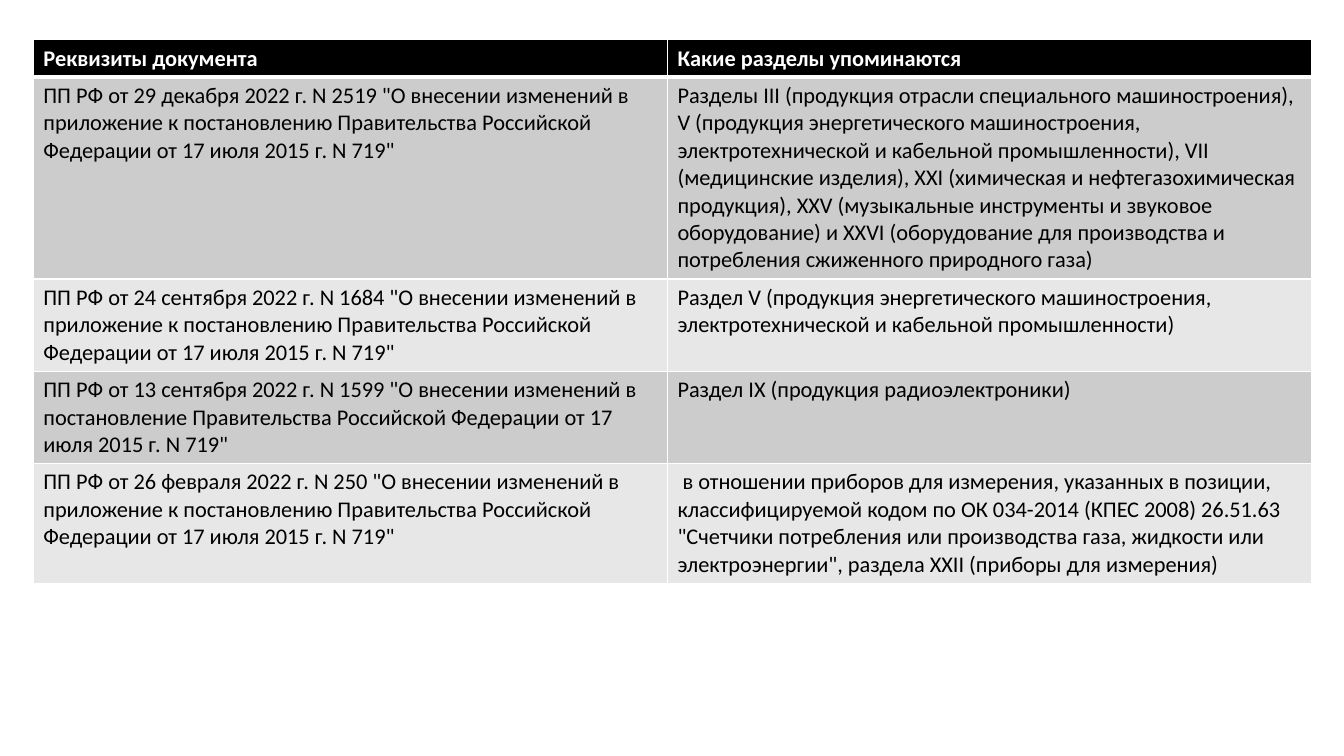
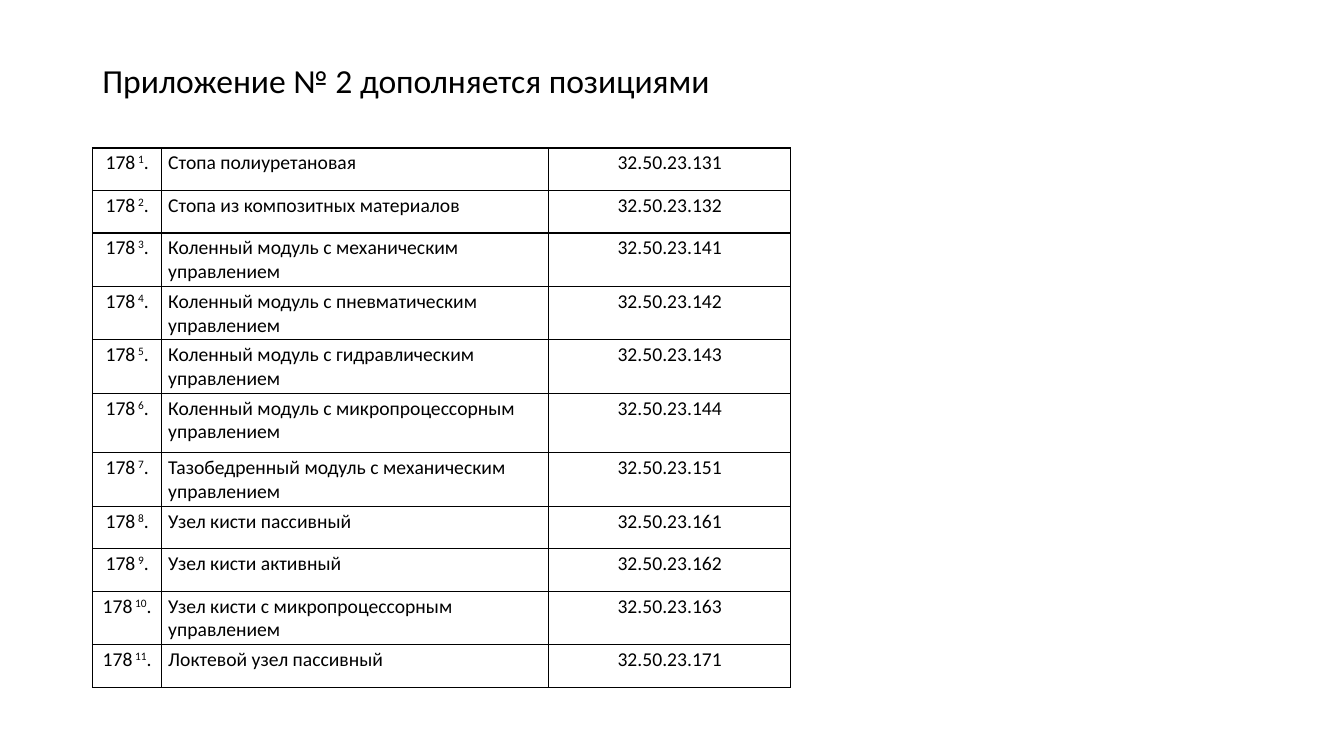
from lxml import etree
from pptx import Presentation
from pptx.dml.color import RGBColor
from pptx.enum.text import MSO_ANCHOR, PP_ALIGN
from pptx.oxml.ns import qn
from pptx.util import Cm, Pt

LEFT, CENTER = PP_ALIGN.LEFT, PP_ALIGN.CENTER
MIDDLE = MSO_ANCHOR.MIDDLE

COLORS = {
    "text": "000000",
    "paper": "FFFFFF",
    "header": "000000",
    "band_dark": "CCCCCC",
    "band_light": "E7E7E7",
}

AMENDS_ANNEX = "приложение к постановлению"
AMENDS_DECREE = "постановление"

DECREES = [
    ("29 декабря 2022 г. N 2519", AMENDS_ANNEX,
     "Разделы III (продукция отрасли специального машиностроения), "
     "V (продукция энергетического машиностроения, электротехнической и "
     "кабельной промышленности), VII (медицинские изделия), XXI (химическая и "
     "нефтегазохимическая продукция), XXV (музыкальные инструменты и звуковое "
     "оборудование) и XXVI (оборудование для производства и потребления "
     "сжиженного природного газа)"),
    ("24 сентября 2022 г. N 1684", AMENDS_ANNEX,
     "Раздел V (продукция энергетического машиностроения, электротехнической "
     "и кабельной промышленности)"),
    ("13 сентября 2022 г. N 1599", AMENDS_DECREE,
     "Раздел IX (продукция радиоэлектроники)"),
    ("26 февраля 2022 г. N 250", AMENDS_ANNEX,
     " в отношении приборов для измерения, указанных в позиции, "
     "классифицируемой кодом по ОК 034-2014 (КПЕС 2008) 26.51.63 \"Счетчики "
     "потребления или производства газа, жидкости или электроэнергии\", "
     "раздела XXII (приборы для измерения)"),
]

POSITIONS = [
    ("Стопа полиуретановая", "131"),
    ("Стопа из композитных материалов", "132"),
    ("Коленный модуль с механическим управлением", "141"),
    ("Коленный модуль с пневматическим управлением", "142"),
    ("Коленный модуль с гидравлическим управлением", "143"),
    ("Коленный модуль с микропроцессорным управлением", "144"),
    ("Тазобедренный модуль с механическим управлением", "151"),
    ("Узел кисти пассивный", "161"),
    ("Узел кисти активный", "162"),
    ("Узел кисти с микропроцессорным управлением", "163"),
    ("Локтевой узел пассивный", "171"),
]


class DeckBuilder:
    """Holds the shared style and the slide being built."""

    font = "Calibri"

    def __init__(self):
        self.deck = Presentation()
        self.deck.slide_width, self.deck.slide_height = Cm(33.87), Cm(19.05)
        self.page = None

    def new_page(self):
        self.page = self.deck.slides.add_slide(self.deck.slide_layouts[6])

    def style_spans(self, para, size, color="text", bold=False):
        for span in para.runs:
            span.font.name = self.font
            span.font.size = Pt(size)
            span.font.bold = bold
            span.font.color.rgb = RGBColor.from_string(COLORS[color])

    def title(self, text):
        box = self.page.shapes.add_textbox(Cm(2.33), Cm(1.02), Cm(29.21), Cm(2.1))
        frame = box.text_frame
        frame.word_wrap = True
        frame.vertical_anchor = MIDDLE
        frame.text = text
        para = frame.paragraphs[0]
        para.line_spacing = 0.9
        self.style_spans(para, 24)

    def table(self, left, top, widths, heights):
        frame = self.page.shapes.add_table(
            len(heights), len(widths), Cm(left), Cm(top),
            Cm(sum(widths)), Cm(sum(heights)))
        table = frame.table
        table.first_row = table.horz_banding = False
        for column, width in zip(table.columns, widths):
            column.width = Cm(width)
        for row, height in zip(table.rows, heights):
            row.height = Cm(height)
        return table

    def borders(self, cell, color, widths):
        properties = cell._tc.get_or_add_tcPr()
        for side, width in widths.items():
            line = etree.SubElement(properties, qn(f"a:ln{side}"), w=str(Pt(width)))
            fill = etree.SubElement(line, qn("a:solidFill"))
            etree.SubElement(fill, qn("a:srgbClr"), val=COLORS[color])

    def cell(self, cell, pieces, size, fill, line, color="text", bold=False,
             align=LEFT, margins=None, top=1, bottom=1):
        self.borders(cell, line, {"L": 1, "R": 1, "T": top, "B": bottom})
        cell.fill.solid()
        cell.fill.fore_color.rgb = RGBColor.from_string(COLORS[fill])
        if margins:
            cell.margin_left = cell.margin_right = Cm(margins[0])
            cell.margin_top = cell.margin_bottom = Cm(margins[1])
        para = cell.text_frame.paragraphs[0]
        para.alignment = align
        for text, raised in pieces:
            span = para.add_run()
            span.text = text
            if raised:
                span._r.get_or_add_rPr().set("baseline", "30000")
        self.style_spans(para, size, color, bold)

    def decree_table(self, headings, decrees):
        table = self.table(0.84, 1, [15.98, 16.23], [0.91] + [2.24] * len(decrees))
        for column, heading in enumerate(headings):
            self.cell(table.cell(0, column), [(heading, False)], 16, "header",
                      "paper", "paper", bold=True, bottom=3)
        for row, (number, target, sections) in enumerate(decrees, 1):
            decree = (f"ПП РФ от {number} \"О внесении изменений в {target} "
                      "Правительства Российской Федерации от 17 июля 2015 г. N 719\"")
            band = "band_dark" if row % 2 else "band_light"
            for column, text in enumerate((decree, sections)):
                self.cell(table.cell(row, column), [(text, False)], 16, band,
                          "paper", top=3 if row == 1 else 1)

    def position_table(self, positions):
        heights = [1.5 if "микропроцессорным" in name and "модуль" in name else 1.07
                   for name, _ in positions]
        table = self.table(2.33, 3.73, [1.75, 9.75, 6.1], heights)
        for row, (name, code) in enumerate(positions):
            columns = [
                ([("178", False), (f" {row + 1}", True), (".", False)], CENTER),
                ([(name, False)], LEFT),
                ([(f"32.50.23.{code}", False)], CENTER),
            ]
            for column, (pieces, align) in enumerate(columns):
                self.cell(table.cell(row, column), pieces, 14, "paper", "text",
                          align=align, margins=(0.16, 0.08))


def main():
    builder = DeckBuilder()
    builder.new_page()
    builder.decree_table(("Реквизиты документа", "Какие разделы упоминаются"), DECREES)
    builder.new_page()
    builder.title("Приложение № 2 дополняется позициями")
    builder.position_table(POSITIONS)
    builder.deck.save("out.pptx")


if __name__ == "__main__":
    main()
